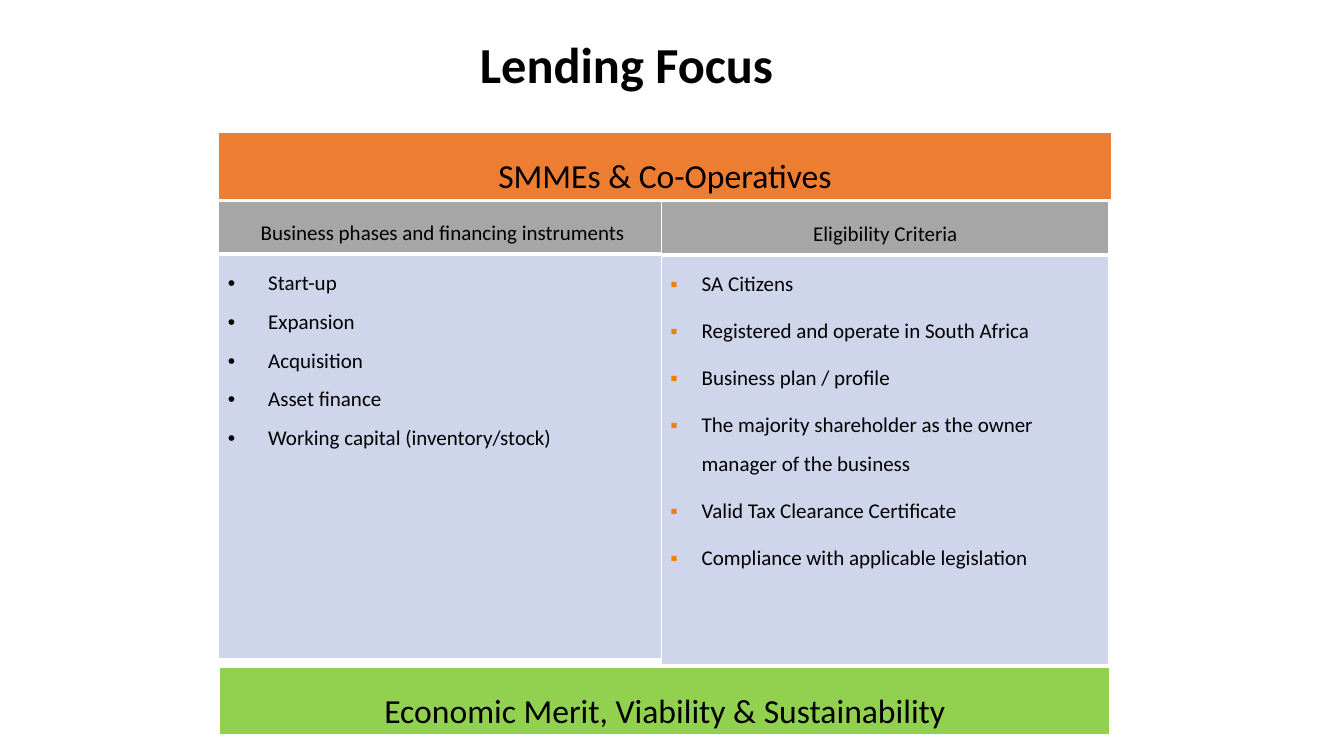
from lxml.etree import SubElement
from pptx import Presentation
from pptx.dml.color import RGBColor
from pptx.enum.text import MSO_ANCHOR, PP_ALIGN
from pptx.oxml import parse_xml
from pptx.oxml.ns import nsdecls, qn
from pptx.util import Inches, Pt

BLACK = RGBColor(0x00, 0x00, 0x00)
WHITE = RGBColor(0xFF, 0xFF, 0xFF)
ORANGE = RGBColor(0xED, 0x7D, 0x31)
GREEN = RGBColor(0x92, 0xD0, 0x50)
GREY = RGBColor(0xA6, 0xA6, 0xA6)
PALE_BLUE = RGBColor(0xCF, 0xD5, 0xEA)
BULLET_ORANGE = RGBColor(0xF0, 0x7F, 0x09)
FONT = "Calibri"

TITLE = "Lending Focus"
# text, left, top, width, row height, fill
BANNERS = [
    ("SMMEs & Co-Operatives", 2.17, 1.31, 8.85, 0.47, ORANGE),
    ("Economic Merit, Viability & Sustainability", 2.18, 6.62, 8.83, 0.54, GREEN),
]
COLUMN_TOP, COLUMN_WIDTH = 1.99, 4.44
COLUMNS = [
    {
        "heading": "Business phases and financing instruments",
        "left": 2.17, "rows": (0.53, 4.01),
        "bullet": "•", "bullet_color": BLACK, "indent": 0.4, "gap": 0,
        "items": ["Start-up", "Expansion", "Acquisition", "Asset finance",
                  "Working capital (inventory/stock)"],
    },
    {
        "heading": "Eligibility Criteria",
        "left": 6.56, "rows": (0.54, 4.06),
        "bullet": "▪", "bullet_color": BULLET_ORANGE, "indent": 0.31, "gap": 6,
        "items": ["SA Citizens", "Registered and operate in South Africa",
                  "Business plan / profile",
                  "The majority shareholder as the owner manager of the business",
                  "Valid Tax Clearance Certificate",
                  "Compliance with applicable legislation"],
    },
]


def add_plain_table(page, left, top, width, row_heights):
    """Add a one-column table without header or banding emphasis."""
    frame = page.shapes.add_table(len(row_heights), 1, Inches(left), Inches(top),
                                  Inches(width), Inches(sum(row_heights)))
    table = frame.table
    table.first_row = table.horz_banding = False
    for row, height in zip(table.rows, row_heights):
        row.height = Inches(height)
    return table


def style_cell(cell, fill, bottom_line):
    cell.fill.solid()
    cell.fill.fore_color.rgb = fill
    cell.margin_left = cell.margin_right = Inches(0.09)
    cell.margin_top = cell.margin_bottom = Inches(0.04)
    properties = cell._tc.get_or_add_tcPr()
    sides = [("L", 1), ("R", 1), ("T", 1), ("B", bottom_line)]
    for position, (side, points) in enumerate(sides):
        properties.insert(position, parse_xml(
            f'<a:ln{side} {nsdecls("a")} w="{Pt(points)}"><a:solidFill>'
            f'<a:srgbClr val="{WHITE}"/></a:solidFill></a:ln{side}>'))


def write(para, text, size, spacing=1.5, bold=False):
    para.line_spacing = spacing
    span = para.add_run()
    span.text = text
    span.font.name = FONT
    span.font.size = Pt(size)
    span.font.bold = bold
    span.font.color.rgb = BLACK


def add_bullet(para, character, color, indent):
    properties = para._p.get_or_add_pPr()
    properties.set("marL", str(Inches(indent)))
    properties.set("indent", str(-Inches(indent)))
    bullet_color = SubElement(properties, qn("a:buClr"))
    SubElement(bullet_color, qn("a:srgbClr"), val=str(color))
    SubElement(properties, qn("a:buFont"), typeface="Arial")
    SubElement(properties, qn("a:buChar"), char=character)


def fill_heading(cell, text, size, fill):
    style_cell(cell, fill, bottom_line=3)
    cell.vertical_anchor = MSO_ANCHOR.MIDDLE
    para = cell.text_frame.paragraphs[0]
    para.alignment = PP_ALIGN.CENTER
    write(para, text, size)


def fill_list(cell, column):
    style_cell(cell, PALE_BLUE, bottom_line=1)
    frame = cell.text_frame
    for number, item in enumerate(column["items"]):
        para = frame.add_paragraph() if number else frame.paragraphs[0]
        add_bullet(para, column["bullet"], column["bullet_color"], column["indent"])
        if number:
            para.space_before = Pt(column["gap"])
        write(para, item, 15)


def add_title(page):
    box = page.shapes.add_textbox(Inches(2.69), Inches(0.21), Inches(7.05), Inches(0.91))
    frame = box.text_frame
    frame.word_wrap = True
    frame.vertical_anchor = MSO_ANCHOR.MIDDLE
    para = frame.paragraphs[0]
    para.alignment = PP_ALIGN.CENTER
    write(para, TITLE, 36, spacing=0.9, bold=True)


def main():
    deck = Presentation()
    deck.slide_width, deck.slide_height = Inches(13.33), Inches(7.5)
    page = deck.slides.add_slide(deck.slide_layouts[6])
    add_title(page)
    for column in COLUMNS:
        table = add_plain_table(page, column["left"], COLUMN_TOP, COLUMN_WIDTH,
                                column["rows"])
        fill_heading(table.cell(0, 0), column["heading"], 15, GREY)
        fill_list(table.cell(1, 0), column)
    for text, left, top, width, height, fill in BANNERS:
        table = add_plain_table(page, left, top, width, [height])
        fill_heading(table.cell(0, 0), text, 24, fill)
    deck.save("out.pptx")


if __name__ == "__main__":
    main()
